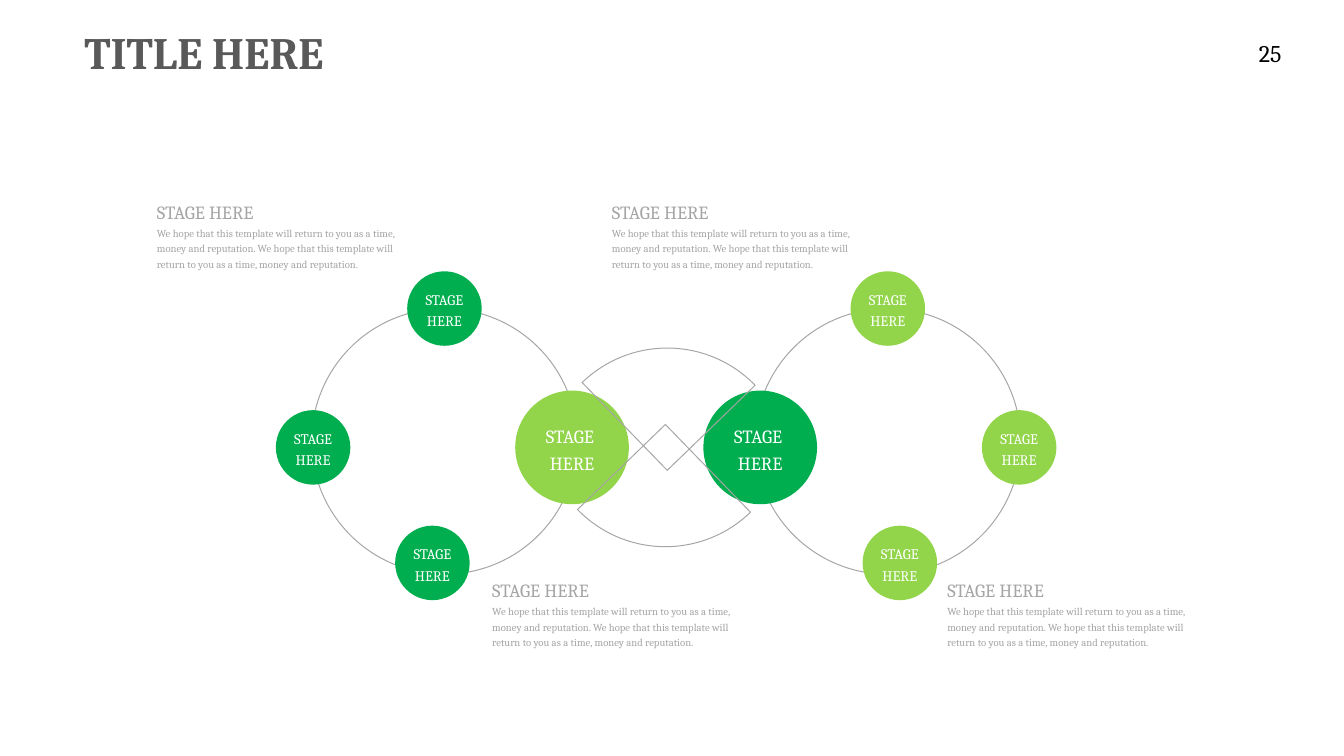
from dataclasses import dataclass

from pptx import Presentation
from pptx.dml.color import RGBColor
from pptx.enum.shapes import MSO_SHAPE
from pptx.enum.text import MSO_ANCHOR, PP_ALIGN
from pptx.util import Cm, Pt

GREEN = RGBColor(0x00, 0xAE, 0x4F)
LIME = RGBColor(0x92, 0xD5, 0x4A)
GREY = RGBColor(0xA5, 0xA5, 0xA5)
DARK = RGBColor(0x59, 0x59, 0x59)
BLACK = RGBColor(0x00, 0x00, 0x00)
WHITE = RGBColor(0xFF, 0xFF, 0xFF)

AXIS = 17.7
RING_OFFSET, RING_Y, RING_SIZE = 5.89, 11.73, 7.06
SECTOR_SIZE = 6.5
ANGLE_UNIT = 0.6
NOTE_PITCH = 12.09
BODY = ("We hope that this template will return to you as a time, "
        "money and reputation. ") * 2


@dataclass(frozen=True)
class Node:
    offset: float
    y: float
    size: float
    lines: tuple[str, ...]
    font_size: float
    left_fill: RGBColor
    right_fill: RGBColor


@dataclass(frozen=True)
class Sector:
    x: float
    y: float
    start: float


@dataclass(frozen=True)
class NoteRow:
    left: float
    top: float


@dataclass(frozen=True)
class Label:
    text: str
    left: float
    top: float
    width: float
    height: float
    size: float
    color: RGBColor
    bold: bool = False
    spacing: float = 1.2
    inset_x: float = 0
    inset_y: float = 0


NODES = [
    Node(2.5, 11.89, 3.02, ("STAGE ", "HERE"), 14, LIME, GREEN),
    *(Node(offset, y, 1.98, ("STAGE HERE",), 11, GREEN, LIME)
      for offset, y in ((9.38, 11.89), (5.89, 8.2), (6.21, 14.96))),
]
SECTORS = [Sector(17.73, 12.5, 225.9), Sector(17.68, 11.28, 45.9)]
NOTE_ROWS = [NoteRow(13.08, 15.27), NoteRow(4.17, 5.22)]
TITLE = Label("TITLE HERE", 1.96, 0.53, 12.8, 1.7, 33.8, DARK, True, 1, 0.28, 0.13)
PAGE = Label("25", 33.2, 0.91, 1.63, 1.37, 18, BLACK, False, 1, 0.25, 0.13)


def write(sp, lines: tuple[str, ...], size: float, color: RGBColor,
          bold: bool = False, spacing: float = 1.2,
          align: PP_ALIGN = PP_ALIGN.LEFT, anchor: MSO_ANCHOR = MSO_ANCHOR.TOP,
          inset_x: float = 0, inset_y: float = 0) -> None:
    tf = sp.text_frame
    frame_format = {
        "word_wrap": True, "vertical_anchor": anchor,
        "margin_left": Cm(inset_x), "margin_right": Cm(inset_x),
        "margin_top": Cm(inset_y), "margin_bottom": Cm(inset_y),
    }
    for name, value in frame_format.items():
        setattr(tf, name, value)
    for i, line in enumerate(lines):
        p = tf.paragraphs[0] if i == 0 else tf.add_paragraph()
        p.alignment, p.line_spacing = align, spacing
        r = p.add_run()
        r.text = line
        for name, value in {"name": "Cambria", "size": Pt(size), "bold": bold}.items():
            setattr(r.font, name, value)
        r.font.color.rgb = color


def add_round(s, kind: MSO_SHAPE, x: float, y: float, size: float,
              fill: RGBColor | None = None):
    sp = s.shapes.add_shape(kind, Cm(x - size / 2), Cm(y - size / 2), Cm(size), Cm(size))
    sp.shadow.inherit = False
    if fill is None:
        sp.fill.background()
        sp.line.color.rgb = GREY
        sp.line.width = Pt(0.75)
    else:
        sp.fill.solid()
        sp.fill.fore_color.rgb = fill
        sp.line.fill.background()
    return sp


def add_cycle(s, side: int) -> None:
    add_round(s, MSO_SHAPE.OVAL, AXIS + side * RING_OFFSET, RING_Y, RING_SIZE)
    for node in NODES:
        fill = node.left_fill if side < 0 else node.right_fill
        sp = add_round(s, MSO_SHAPE.OVAL, AXIS + side * node.offset, node.y, node.size, fill)
        write(sp, node.lines, node.font_size, WHITE,
              align=PP_ALIGN.CENTER, anchor=MSO_ANCHOR.MIDDLE)


def add_sector(s, sector: Sector) -> None:
    sp = add_round(s, MSO_SHAPE.PIE, sector.x, sector.y, SECTOR_SIZE)
    sp.adjustments[0] = sector.start * ANGLE_UNIT
    sp.adjustments[1] = (sector.start + 90) * ANGLE_UNIT


def add_label(s, label: Label) -> None:
    sp = s.shapes.add_textbox(Cm(label.left), Cm(label.top), Cm(label.width), Cm(label.height))
    write(sp, (label.text,), label.size, label.color, label.bold, label.spacing,
          inset_x=label.inset_x, inset_y=label.inset_y)


def add_note(s, left: float, top: float) -> None:
    add_label(s, Label(BODY.strip(), left, top + 0.75, 6.55, 1.65, 8, GREY))
    add_label(s, Label("STAGE HERE", left, top, 3.07, 0.71, 14, GREY))


def main() -> None:
    prs = Presentation()
    prs.slide_width, prs.slide_height = Cm(35.71), Cm(20.09)
    s = prs.slides.add_slide(prs.slide_layouts[6])
    for side in (-1, 1):
        add_cycle(s, side)
    for sector in SECTORS:
        add_sector(s, sector)
    for row in NOTE_ROWS:
        for col in range(2):
            add_note(s, row.left + col * NOTE_PITCH, row.top)
    for label in (TITLE, PAGE):
        add_label(s, label)
    prs.save("out.pptx")


if __name__ == "__main__":
    main()
